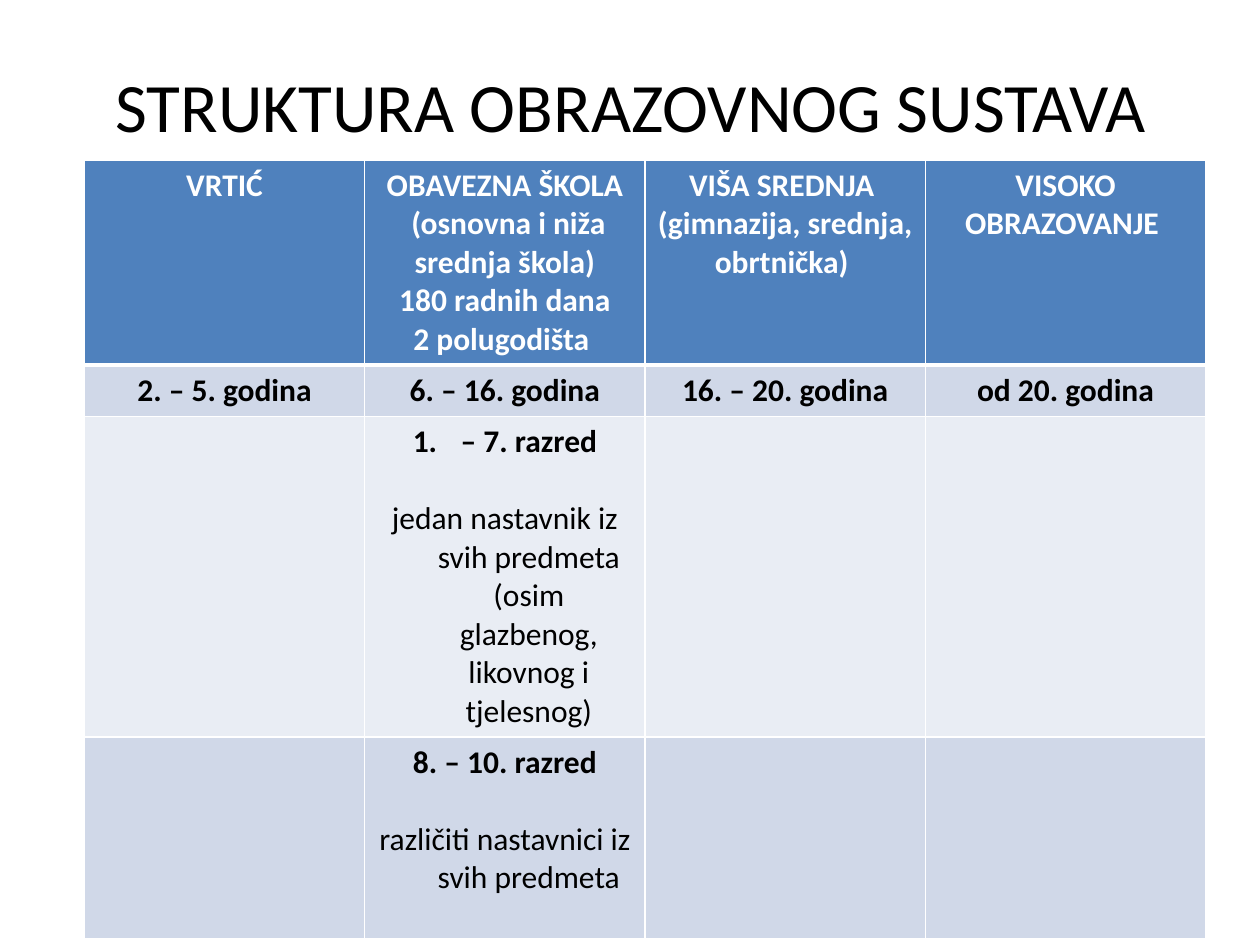
"""Build a slide with a table of the stages of an education system."""
from dataclasses import dataclass

from lxml.etree import SubElement
from pptx import Presentation
from pptx.dml.color import RGBColor
from pptx.enum.text import MSO_ANCHOR as Anchor, PP_ALIGN as Align
from pptx.oxml.ns import qn
from pptx.util import Inches, Pt

WHITE = RGBColor(0xFF, 0xFF, 0xFF)
BLACK = RGBColor(0, 0, 0)
HEADER_BLUE = RGBColor(0x4F, 0x81, 0xBD)
BAND_DARK = RGBColor(0xD0, 0xD8, 0xE8)
BAND_LIGHT = RGBColor(0xE9, 0xED, 0xF4)
FONT = "Calibri"
HANGING = Inches(0.38)
BLANK_LINE = 22


@dataclass(frozen=True)
class Line:
    text: str
    bold: bool = True
    hanging: bool = False
    numbered: bool = False
    gap: float = 0


@dataclass(frozen=True)
class Row:
    height: float
    fill: RGBColor
    color: RGBColor
    cells: tuple
    rule: float = 1


def razred(heading: str, detail: str, numbered: bool = False) -> tuple:
    """Return a heading and its detail, one line apart."""
    return (
        Line(heading, hanging=True, numbered=numbered),
        Line(detail, bold=False, hanging=True, gap=BLANK_LINE),
    )


ROWS = (
    Row(1.6, HEADER_BLUE, WHITE, (
        (Line("VRTIĆ"),),
        (Line("OBAVEZNA ŠKOLA"), Line(" (osnovna i niža srednja škola)"),
         Line("180 radnih dana"), Line("2 polugodišta ")),
        (Line("VIŠA SREDNJA "), Line("(gimnazija, srednja, obrtnička) ")),
        (Line("VISOKO OBRAZOVANJE "),),
    ), rule=3),
    Row(0.41, BAND_DARK, BLACK, (
        (Line("2. – 5. godina"),),
        (Line("6. – 16. godina"),),
        (Line("16. – 20. godina"),),
        (Line("od 20. godina"),),
    )),
    Row(2.5, BAND_LIGHT, BLACK, (
        (),
        razred("– 7. razred", "jedan nastavnik iz svih predmeta "
               "(osim glazbenog, likovnog i tjelesnog)", numbered=True),
        (),
        (),
    )),
    Row(1.6, BAND_DARK, BLACK, (
        (),
        razred("8. – 10. razred", "različiti nastavnici iz svih predmeta"),
        (),
        (),
    )),
)


def write(para, text: str, *, size: float, color: RGBColor, bold: bool = False) -> None:
    """Add one centred, formatted span to a paragraph."""
    para.alignment = Align.CENTER
    span = para.add_run()
    span.text = text
    span.font.name = FONT
    span.font.size = Pt(size)
    span.font.bold = bold
    span.font.color.rgb = color


def set_borders(cell, top: float, bottom: float) -> None:
    """Draw white borders round a cell, with widths in points."""
    properties = cell._tc.get_or_add_tcPr()
    for side, width in (("L", 1), ("R", 1), ("T", top), ("B", bottom)):
        border = SubElement(properties, qn(f"a:ln{side}"), w=str(Pt(width)))
        fill = SubElement(border, qn("a:solidFill"))
        SubElement(fill, qn("a:srgbClr"), val=str(WHITE))


def fill_cell(cell, lines: tuple, color: RGBColor) -> None:
    """Write the lines of a cell as paragraphs."""
    frame = cell.text_frame
    for index, line in enumerate(lines):
        para = frame.add_paragraph() if index else frame.paragraphs[0]
        write(para, line.text, size=18, color=color, bold=line.bold)
        if line.gap:
            para.space_before = Pt(line.gap)
        if line.hanging:
            properties = para._p.get_or_add_pPr()
            properties.set("marL", str(HANGING))
            properties.set("indent", str(-HANGING))
            if line.numbered:
                SubElement(properties, qn("a:buAutoNum"), type="arabicPeriod")


def add_stage_table(page, rows: tuple) -> None:
    """Add the table of stages."""
    height = sum(row.height for row in rows)
    columns = len(rows[0].cells)
    table = page.shapes.add_table(
        len(rows), columns, Inches(0.67), Inches(1.27), Inches(8.9), Inches(height)
    ).table
    top = 1
    for index, row in enumerate(rows):
        table.rows[index].height = Inches(row.height)
        for cell, lines in zip(table.rows[index].cells, row.cells):
            set_borders(cell, top, row.rule)
            cell.fill.solid()
            cell.fill.fore_color.rgb = row.fill
            fill_cell(cell, lines, row.color)
        top = row.rule


def main() -> None:
    """Build and save the deck."""
    deck = Presentation()
    deck.slide_width, deck.slide_height = Inches(10), Inches(7.5)
    page = deck.slides.add_slide(deck.slide_layouts[5])
    title = page.shapes.title
    title.left, title.top = Inches(0.51), Inches(0.21)
    title.width, title.height = Inches(9), Inches(1.25)
    title.text_frame.vertical_anchor = Anchor.MIDDLE
    write(title.text_frame.paragraphs[0], "STRUKTURA OBRAZOVNOG SUSTAVA",
          size=39.6, color=BLACK)
    add_stage_table(page, ROWS)
    deck.save("out.pptx")


if __name__ == "__main__":
    main()
